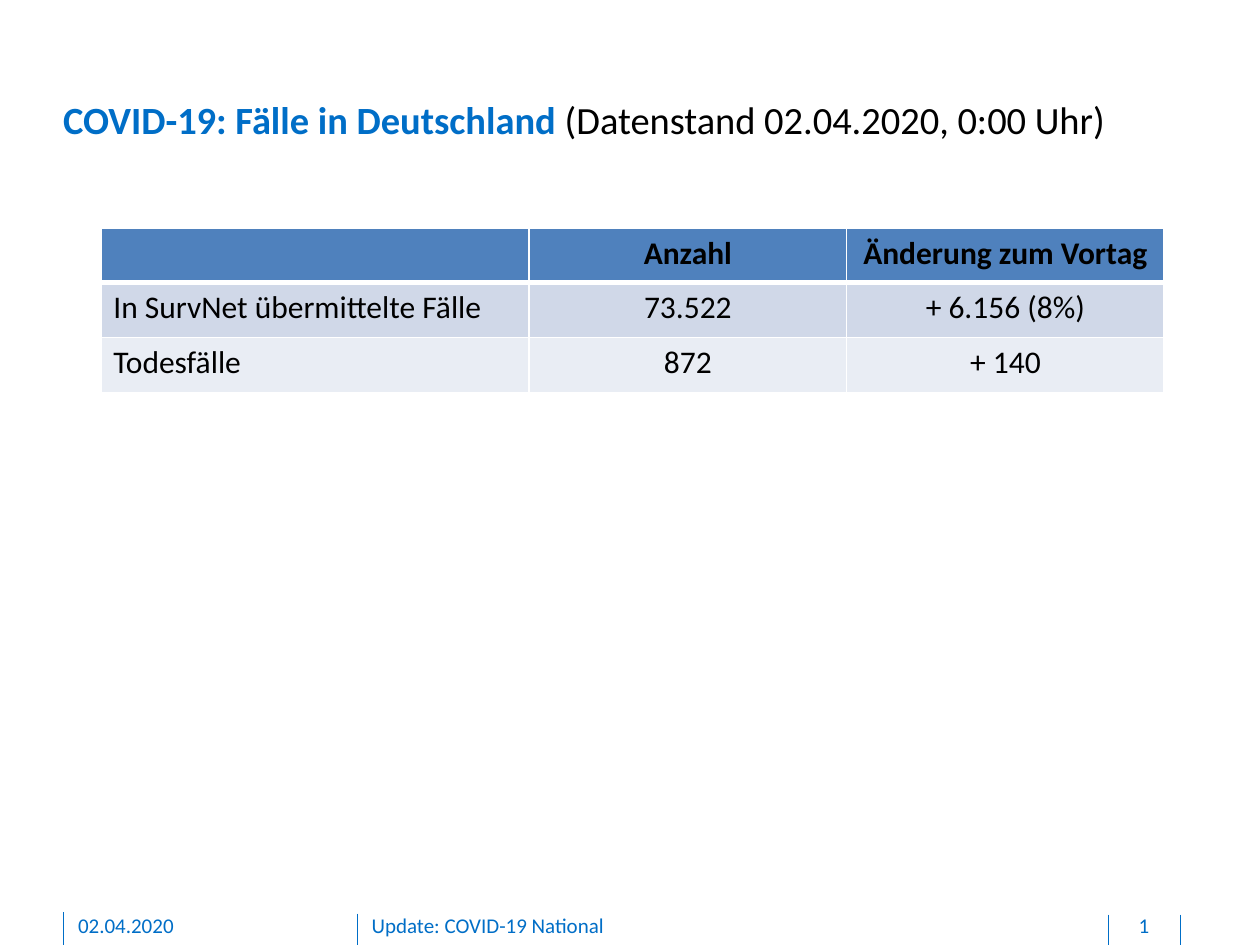
from lxml.etree import SubElement
from pptx import Presentation
from pptx.dml.color import RGBColor
from pptx.enum.shapes import MSO_CONNECTOR
from pptx.enum.text import MSO_ANCHOR, PP_ALIGN
from pptx.oxml.ns import qn
from pptx.util import Inches, Pt

BLUE, BLACK, WHITE = "006EC7", "000000", "FFFFFF"
HEADER_FILL, BAND_FILLS = "4F81BD", ("D0D8E8", "E9EDF4")
FOOTER_TOP = 7.24

CASES = [
    ("", "Anzahl", "Änderung zum Vortag"),
    ("In SurvNet übermittelte Fälle", "73.522", "+ 6.156 (8%)"),
    ("Todesfälle", "872", "+ 140"),
]


def color(hex_string):
    return RGBColor.from_string(hex_string)


class SlideBuilder:
    font_name = "Calibri"

    def __init__(self, presentation):
        self.slide = presentation.slides.add_slide(presentation.slide_layouts[5])

    def format_run(self, run, size, hex_string, bold=False):
        run.font.name = self.font_name
        run.font.size = Pt(size)
        run.font.bold = bold
        run.font.color.rgb = color(hex_string)

    def title(self, left, top, width, height, parts):
        """Fill the title placeholder with (text, colour, bold) parts."""
        shape = self.slide.shapes.title
        shape.left, shape.top = Inches(left), Inches(top)
        shape.width, shape.height = Inches(width), Inches(height)
        frame = shape.text_frame
        frame.margin_left = frame.margin_right = 0
        frame.margin_top = frame.margin_bottom = 0
        frame.vertical_anchor = MSO_ANCHOR.MIDDLE
        paragraph = frame.paragraphs[0]
        paragraph.alignment = PP_ALIGN.LEFT
        for text, hex_string, bold in parts:
            run = paragraph.add_run()
            run.text = text
            self.format_run(run, 22, hex_string, bold)

    def footer_text(self, left, width, text, alignment=PP_ALIGN.LEFT):
        shape = self.slide.shapes.add_textbox(
            Inches(left), Inches(FOOTER_TOP), Inches(width), Inches(0.21))
        frame = shape.text_frame
        frame.word_wrap = True
        frame.margin_left = frame.margin_right = frame.margin_top = 0
        frame.margin_bottom = Inches(0.05)
        frame.text = text
        paragraph = frame.paragraphs[0]
        paragraph.alignment = alignment
        self.format_run(paragraph.runs[0], 12, BLUE)

    def footer_rule(self, x, top):
        line = self.slide.shapes.add_connector(
            MSO_CONNECTOR.STRAIGHT, Inches(x), Inches(top), Inches(x), Inches(7.5))
        line.line.color.rgb = color(BLUE)
        line.line.width = Pt(0.5)
        SubElement(line._element.spPr, qn("a:effectLst"))

    def cell_borders(self, cell, widths):
        """Draw white borders; widths maps a side (L, R, T, B) to points."""
        properties = cell._tc.get_or_add_tcPr()
        for side, width in widths.items():
            border = SubElement(properties, qn(f"a:ln{side}"), w=str(Pt(width)))
            fill = SubElement(border, qn("a:solidFill"))
            SubElement(fill, qn("a:srgbClr"), val=WHITE)

    def table(self, left, top, column_widths, row_heights, rows):
        table = self.slide.shapes.add_table(
            len(rows), len(column_widths), Inches(left), Inches(top),
            Inches(sum(column_widths)), Inches(sum(row_heights))).table
        for column, width in zip(table.columns, column_widths):
            column.width = Inches(width)
        for row_index, texts in enumerate(rows):
            table.rows[row_index].height = Inches(row_heights[row_index])
            is_header = row_index == 0
            fill = HEADER_FILL if is_header else BAND_FILLS[(row_index - 1) % 2]
            borders = {"L": 1, "R": 1, "T": 3 if row_index == 1 else 1,
                       "B": 3 if is_header else 1}
            for column_index, text in enumerate(texts):
                cell = table.cell(row_index, column_index)
                self.cell_borders(cell, borders)
                cell.fill.solid()
                cell.fill.fore_color.rgb = color(fill)
                if not text:
                    continue
                cell.text_frame.text = text
                paragraph = cell.text_frame.paragraphs[0]
                paragraph.alignment = PP_ALIGN.CENTER if column_index else PP_ALIGN.LEFT
                self.format_run(paragraph.runs[0], 18, BLACK, is_header)


def main():
    presentation = Presentation()
    presentation.slide_width, presentation.slide_height = Inches(10), Inches(7.5)
    builder = SlideBuilder(presentation)

    for x, top in ((2.84, 7.25), (0.5, 7.24), (9.37, 7.26), (8.8, 7.26)):
        builder.footer_rule(x, top)
    builder.title(0.5, 0.76, 8.85, 0.37, [
        ("COVID-19: Fälle in Deutschland ", BLUE, True),
        ("(Datenstand 02.04.2020, 0:00 Uhr)", BLACK, False),
    ])
    builder.footer_text(0.62, 2.03, "02.04.2020")
    builder.footer_text(2.95, 5.67, "Update: COVID-19 National")
    builder.footer_text(8.81, 0.54, "1", PP_ALIGN.CENTER)
    builder.table(0.8, 1.81, (3.4, 2.52, 2.52), (0.43, 0.44, 0.44), CASES)

    presentation.save("out.pptx")


if __name__ == "__main__":
    main()
